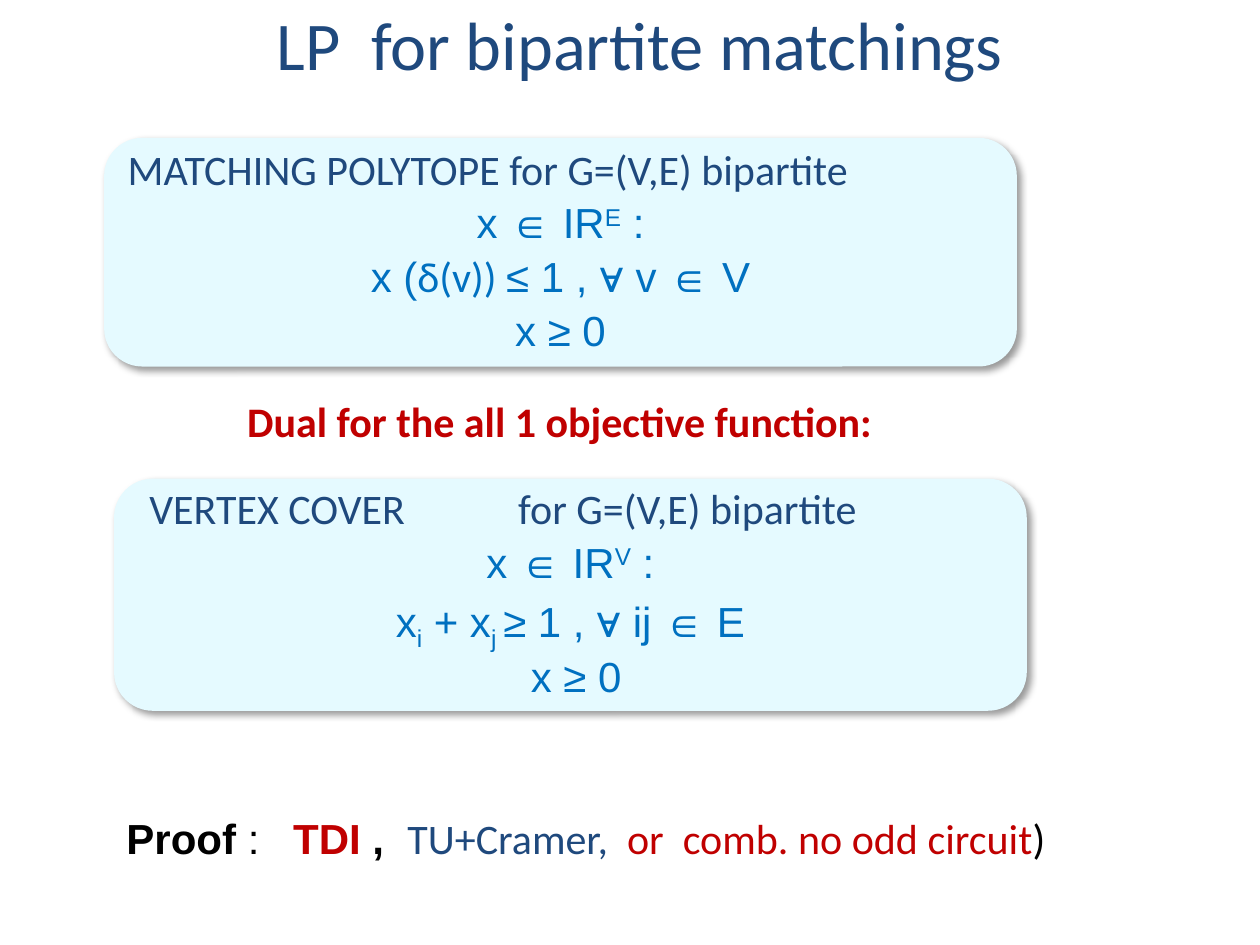
from lxml import etree
from pptx import Presentation
from pptx.dml.color import RGBColor
from pptx.enum.shapes import MSO_SHAPE
from pptx.enum.text import MSO_ANCHOR, PP_ALIGN
from pptx.oxml.ns import qn
from pptx.util import Cm, Pt

COLOURS = {
    "navy": "1F497D",
    "blue": "0070C0",
    "red": "C00000",
    "black": "000000",
    "panel": "E5FAFF",
}
BODY_SIZE = 24

# A run is (text, style); a style may hold font, colour, bold, italic, size, baseline.
HEADING = {"font": "Calibri", "colour": "navy"}
MATH = {"font": "Arial", "colour": "blue"}
SUPER = {**MATH, "baseline": 30}
SUB = {**MATH, "baseline": -25}
RED = {"font": "Calibri", "colour": "red"}
PROOF = {"font": "Arial", "colour": "black"}
PROOF_BOLD = {**PROOF, "bold": True}

TITLE = [("LP  for bipartite matchings", {**HEADING, "size": 39})]
DUAL = [(" ", {**PROOF, "italic": True}),
        ("Dual for the all 1 objective function:", {**RED, "bold": True})]
PROOF_LINE = [
    ("Proof ", PROOF_BOLD),
    (":\t", PROOF),
    ("TDI", {**PROOF_BOLD, "colour": "red"}),
    (" ,  ", PROOF_BOLD),
    ("TU+Cramer,  ", HEADING),
    ("or  comb. no odd circuit", RED),
    (")", {**RED, "colour": "black"}),
]
VERTEX_COVER = [
    [(" ", {**HEADING, "font": "Arial"}),
     ("VERTEX COVER\tfor G=(V,E) bipartite", HEADING)],
    [("x ∈ IR", MATH), ("V", SUPER), (" :", MATH)],
    [("x", MATH), ("i", SUB), (" + x", MATH), ("j ", SUB), ("≥ 1 , ∀ ij ∈ E", MATH)],
    [(" x ≥ 0", MATH)],
]
MATCHING = [
    [("MATCHING POLYTOPE for G=(V,E) bipartite", HEADING)],
    [("x ∈ IR", MATH), ("E", SUPER), (" :", MATH)],
    [("x (", MATH), ("δ(v)) ", {**MATH, "font": "Calibri"}),
     ("≤ ", {**MATH, "italic": True}), ("1 , ∀ v ∈ V", MATH)],
    [("x ≥ 0", MATH)],
]

# Left, top, width, height in cm
PANELS = [
    (VERTEX_COVER, (2.3, 9.65, 18.4, 4.68), 7.67),
    (MATCHING, (2.1, 2.78, 18.4, 4.61), None),
]
LINES = [
    (TITLE, (0.7, -0.78, 24.4, 3.32), PP_ALIGN.CENTER, MSO_ANCHOR.MIDDLE, None),
    (PROOF_LINE, (2.3, 16.25, 20, 1.28), PP_ALIGN.LEFT, MSO_ANCHOR.TOP, 3.36),
    (DUAL, (4.5, 7.85, 13.8, 1.28), PP_ALIGN.LEFT, MSO_ANCHOR.TOP, None),
]


def colour(name):
    return RGBColor.from_string(COLOURS[name])


def add_runs(para, runs):
    for text, style in runs:
        span = para.add_run()
        span.text = text
        font = span.font
        font.name = style["font"]
        font.size = Pt(style.get("size", BODY_SIZE))
        font.color.rgb = colour(style["colour"])
        font.bold = style.get("bold", False)
        font.italic = style.get("italic", False)
        if "baseline" in style:
            span._r.get_or_add_rPr().set("baseline", str(style["baseline"] * 1000))


def add_tab_stop(para, position):
    stops = etree.SubElement(para._p.get_or_add_pPr(), qn("a:tabLst"))
    etree.SubElement(stops, qn("a:tab"), pos=str(Cm(position)), algn="l")


def add_shadow(shape):
    shape.shadow.inherit = False
    effects = shape._element.spPr.find(qn("a:effectLst"))
    shadow = etree.SubElement(effects, qn("a:outerShdw"), blurRad=str(Pt(4)),
                              dist=str(Pt(3)), dir=str(45 * 60000),
                              algn="tl", rotWithShape="0")
    tint = etree.SubElement(shadow, qn("a:srgbClr"), val=COLOURS["black"])
    etree.SubElement(tint, qn("a:alpha"), val="40000")


def add_panel(page, paragraphs, place, tab):
    """Rounded panel: a left-aligned heading over centred formulas."""
    panel = page.shapes.add_shape(MSO_SHAPE.ROUNDED_RECTANGLE, *map(Cm, place))
    panel.fill.solid()
    panel.fill.fore_color.rgb = colour("panel")
    panel.line.fill.background()
    add_shadow(panel)
    frame = panel.text_frame
    frame.word_wrap = True
    frame.vertical_anchor = MSO_ANCHOR.MIDDLE
    for index, runs in enumerate(paragraphs):
        para = frame.add_paragraph() if index else frame.paragraphs[0]
        para.alignment = PP_ALIGN.CENTER if index else PP_ALIGN.LEFT
        para.line_spacing = 0.9
        para.space_before = Pt(0.2 * BODY_SIZE)
        add_runs(para, runs)
    if tab:
        add_tab_stop(frame.paragraphs[0], tab)


def add_line_of_text(page, runs, place, alignment, anchor, tab):
    box = page.shapes.add_textbox(*map(Cm, place))
    frame = box.text_frame
    frame.word_wrap = True
    frame.vertical_anchor = anchor
    para = frame.paragraphs[0]
    para.alignment = alignment
    add_runs(para, runs)
    if tab:
        add_tab_stop(para, tab)


def main():
    deck = Presentation()
    deck.slide_width, deck.slide_height = Cm(25.4), Cm(19.05)
    page = deck.slides.add_slide(deck.slide_layouts[6])
    for panel in PANELS:
        add_panel(page, *panel)
    for line in LINES:
        add_line_of_text(page, *line)
    deck.save("out.pptx")


if __name__ == "__main__":
    main()
